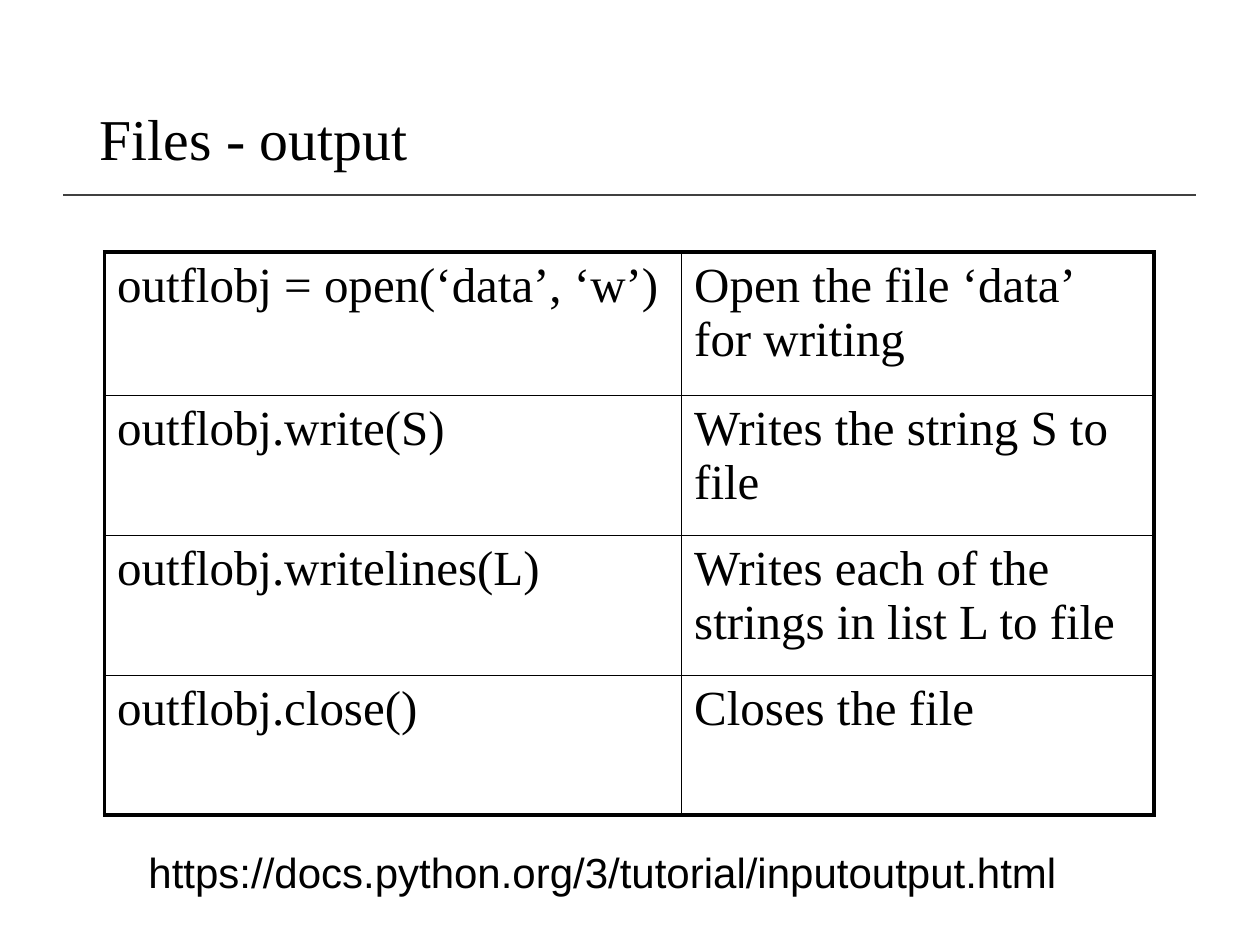
import pptx
import pptx.util
import pptx.dml.color
import pptx.enum.shapes
import pptx.enum.text
import pptx.oxml
import pptx.oxml.ns

Inches = pptx.util.Inches
Pt = pptx.util.Pt

HEADING = "Files - output"
OPERATIONS = [
    ("outflobj = open(‘data’, ‘w’)", "Open the file ‘data’ for writing"),
    ("outflobj.write(S)", "Writes the string S to file"),
    ("outflobj.writelines(L)", "Writes each of the strings in list L to file"),
    ("outflobj.close()", "Closes the file"),
]
REFERENCE = "https://docs.python.org/3/tutorial/inputoutput.html"
COLUMN_WIDTHS = [4.58, 3.75]
ROW_HEIGHTS = [1.14, 1.11, 1.11, 1.11]
BLACK = "000000"
SERIF = "Times New Roman"
OUTER, INNER = 2.25, 1


def rgb(value):
    return pptx.dml.color.RGBColor.from_string(value)


def write(frame, text, size, font=SERIF, color=BLACK, anchor="TOP", spacing=None):
    frame.word_wrap = True
    frame.vertical_anchor = getattr(pptx.enum.text.MSO_ANCHOR, anchor)
    paragraph = frame.paragraphs[0]
    paragraph.alignment = pptx.enum.text.PP_ALIGN.LEFT
    paragraph.line_spacing = spacing
    run = paragraph.add_run()
    run.text = text
    run.font.size = Pt(size)
    run.font.name = font
    run.font.color.rgb = rgb(color)


def place(shape, left, top, width, height):
    shape.left, shape.top = Inches(left), Inches(top)
    shape.width, shape.height = Inches(width), Inches(height)


def border(cell, widths, color=BLACK):
    properties = cell._tc.get_or_add_tcPr()
    for index, (side, width) in enumerate(widths.items()):
        properties.insert(index, pptx.oxml.parse_xml(
            f'<a:ln{side} {pptx.oxml.ns.nsdecls("a")} w="{Pt(width)}">'
            f'<a:solidFill><a:srgbClr val="{color}"/></a:solidFill></a:ln{side}>'))


def add_operations(slide):
    table = slide.shapes.add_table(
        len(OPERATIONS), len(COLUMN_WIDTHS), Inches(0.83), Inches(2),
        Inches(sum(COLUMN_WIDTHS)), Inches(sum(ROW_HEIGHTS))).table
    table.first_row = table.horz_banding = False
    for column, width in zip(table.columns, COLUMN_WIDTHS):
        column.width = Inches(width)
    last_row, last_column = len(OPERATIONS) - 1, len(COLUMN_WIDTHS) - 1
    for r, operation in enumerate(OPERATIONS):
        table.rows[r].height = Inches(ROW_HEIGHTS[r])
        for c, text in enumerate(operation):
            cell = table.cell(r, c)
            cell.fill.background()
            write(cell.text_frame, text, 28)
            edges = {"L": c == 0, "R": c == last_column, "T": r == 0, "B": r == last_row}
            border(cell, {side: OUTER if edge else INNER for side, edge in edges.items()})


def main():
    deck = pptx.Presentation()
    deck.slide_width, deck.slide_height = Inches(10), Inches(7.5)
    slide = deck.slides.add_slide(deck.slide_layouts[5])

    rule = slide.shapes.add_connector(
        pptx.enum.shapes.MSO_CONNECTOR.STRAIGHT,
        Inches(0.5), Inches(1.55), Inches(9.49), Inches(1.55))
    rule.line.color.rgb = rgb("404040")
    rule.line.width = Pt(1)
    rule._element.spPr.append(pptx.oxml.parse_xml(
        f'<a:effectLst {pptx.oxml.ns.nsdecls("a")}/>'))

    add_operations(slide)

    heading = slide.shapes.title
    place(heading, 0.69, 0.4, 8.62, 1.45)
    write(heading.text_frame, HEADING, 33, anchor="MIDDLE", spacing=0.9)

    reference = slide.shapes.add_textbox(Inches(1.08), Inches(6.67), Inches(7.92), Inches(0.5))
    write(reference.text_frame, REFERENCE, 24, font="Arial")
    reference.text_frame.auto_size = pptx.enum.text.MSO_AUTO_SIZE.SHAPE_TO_FIT_TEXT

    deck.save("out.pptx")


if __name__ == "__main__":
    main()
